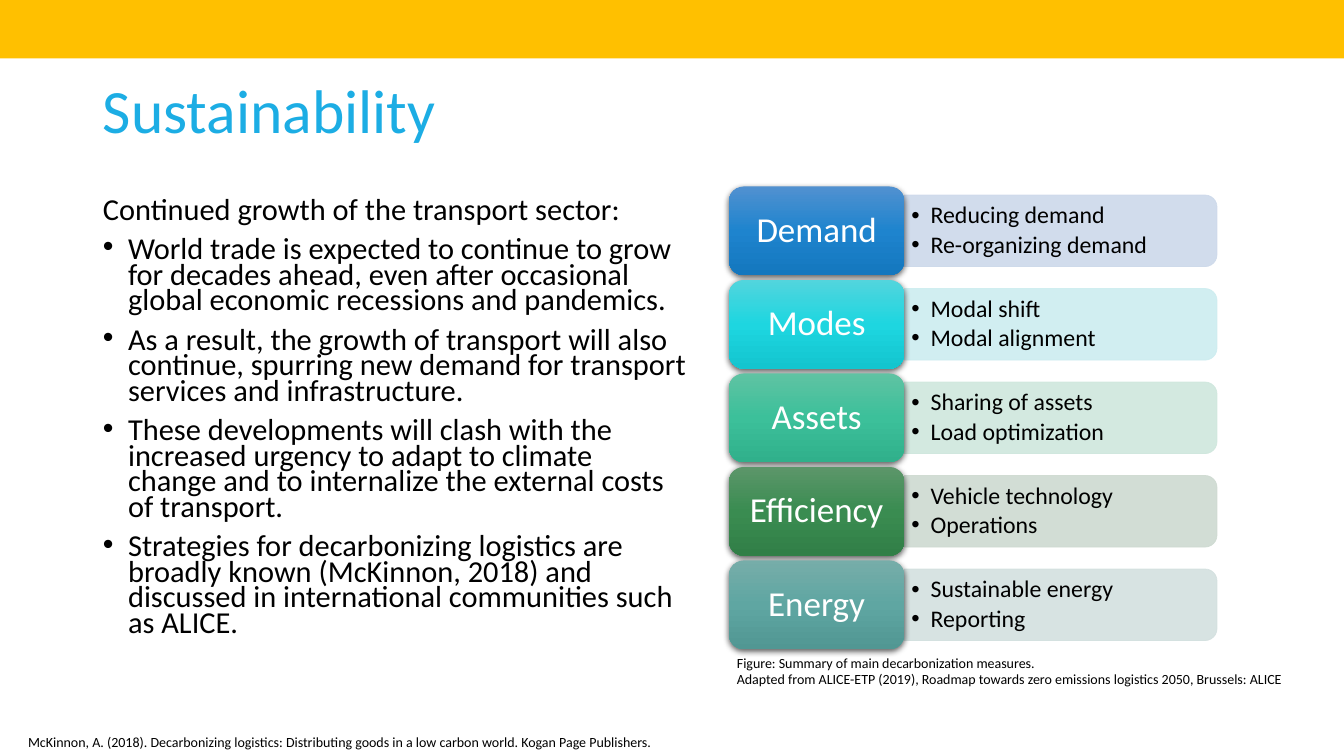
from copy import deepcopy

from lxml import etree
from pptx import Presentation
from pptx.dml.color import RGBColor
from pptx.enum import shapes, text
from pptx.oxml.ns import qn
from pptx.util import Inches, Pt

# Content
TITLE = "Sustainability"
INTRO = "Continued growth of the transport sector:"
POINTS = [
    "World trade is expected to continue to grow for decades ahead, even after "
    "occasional global economic recessions and pandemics.",
    "As a result, the growth of transport will also continue, spurring new demand "
    "for transport services and infrastructure.",
    "These developments will clash with the increased urgency to adapt to climate "
    "change and to internalize the external costs of transport.",
    "Strategies for decarbonizing logistics are broadly known (McKinnon, 2018) and "
    "discussed in international communities such as ALICE.",
]
# label, details, tile gradient (top, middle, bottom), band colour
MEASURES = [
    ("Demand", ["Reducing demand", "Re-organizing demand"],
     ("5191D0", "1E84CE", "1477BE"), "CDD9EA"),
    ("Modes", ["Modal shift", "Modal alignment"],
     ("52D5DD", "1ED6E0", "13C5CF"), "CDEDF0"),
    ("Assets", ["Sharing of assets", "Load optimization"],
     ("5FC3A3", "3CC09A", "30B08B"), "CFE7DD"),
    ("Efficiency", ["Vehicle technology", "Operations"],
     ("5C966A", "3A8C51", "317F47"), "CEDAD1"),
    ("Energy", ["Sustainable energy", "Reporting"],
     ("76ADA9", "5FA6A2", "519793"), "D3E0DF"),
]
CAPTION = [
    "Figure: Summary of main decarbonization measures.",
    "Adapted from ALICE-ETP (2019), Roadmap towards zero emissions logistics 2050, "
    "Brussels: ALICE",
]
REFERENCE = ("McKinnon, A. (2018). Decarbonizing logistics: Distributing goods in a "
             "low carbon world. Kogan Page Publishers.")

# Layout of the measures, in inches
FIRST_TOP, LAST_TOP = 1.85, 5.56
STEP = (LAST_TOP - FIRST_TOP) / (len(MEASURES) - 1)
TILE_LEFT, TILE_WIDTH, TILE_HEIGHT = 7.23, 1.74, 0.88
BAND_LEFT, BAND_LENGTH, BAND_HEIGHT = 8.97, 3.1, 0.71
DETAIL_HEIGHT = 0.64


def color(hex_code):
    return RGBColor.from_string(hex_code)


def box(left, top, width, height):
    return [Inches(value) for value in (left, top, width, height)]


def place(holder, left, top, width, height):
    holder.left, holder.top, holder.width, holder.height = box(left, top, width, height)


def add_xml(parent, tag, **attributes):
    return etree.SubElement(parent, qn(tag), attributes)


def write(frame, lines, size, ink="000000", align=text.PP_ALIGN.LEFT,
          anchor=text.MSO_ANCHOR.TOP, spacing=1.0, before=0, after=0,
          indent=0, bullet_from=None, insets=(0.1, 0.05), wrap=True):
    """Fill a frame; lines from index bullet_from on get a bullet and hanging indent."""
    frame.auto_size = text.MSO_AUTO_SIZE.NONE
    frame.word_wrap = wrap
    frame.vertical_anchor = anchor
    frame.margin_left = frame.margin_right = Inches(insets[0])
    frame.margin_top = frame.margin_bottom = Inches(insets[1])
    for index, line in enumerate(lines):
        paragraph = frame.paragraphs[0] if index == 0 else frame.add_paragraph()
        bulleted = bullet_from is not None and index >= bullet_from
        hang = Inches(indent) if bulleted else 0
        properties = paragraph._p.get_or_add_pPr()
        properties.set("marL", str(hang))
        properties.set("indent", str(-hang))
        if bulleted:
            add_xml(properties, "a:buFont", typeface="Arial")
            add_xml(properties, "a:buChar", char="•")
        else:
            add_xml(properties, "a:buNone")
        paragraph.alignment = align
        paragraph.line_spacing = spacing
        paragraph.space_before = Pt(before if index else 0)
        paragraph.space_after = Pt(after)
        run = paragraph.add_run()
        run.text = line
        run.font.name = "Calibri"
        run.font.size = Pt(size)
        run.font.color.rgb = color(ink)


def add_block(kind, area, fill=None):
    block = slide.shapes.add_shape(kind, *box(*area))
    block.shadow.inherit = False
    block.line.fill.background()
    if fill:
        block.fill.solid()
        block.fill.fore_color.rgb = color(fill)
    return block


def add_band(middle, tint):
    # Turned a quarter, so the rounded end points right
    left = BAND_LEFT + (BAND_LENGTH - BAND_HEIGHT) / 2
    band = add_block(shapes.MSO_SHAPE.ROUND_2_SAME_RECTANGLE,
                     (left, middle - BAND_LENGTH / 2, BAND_HEIGHT, BAND_LENGTH), tint)
    band.rotation = 90
    band.line.color.rgb = color(tint)
    band.line.width = Pt(0.5)
    for paint in band._element.spPr.iter(qn("a:srgbClr")):
        add_xml(paint, "a:alpha", val="90000")


def add_tile(top, label, gradient):
    tile = add_block(shapes.MSO_SHAPE.ROUNDED_RECTANGLE,
                     (TILE_LEFT, top, TILE_WIDTH, TILE_HEIGHT))
    tile.fill.gradient()
    tile.fill.gradient_angle = 270
    properties = tile._element.spPr
    stops = properties.find(".//" + qn("a:gsLst"))
    stops.append(deepcopy(stops[-1]))
    for stop, position, shade in zip(tile.fill.gradient_stops, (0, 0.5, 1), gradient):
        stop.position = position
        stop.color.rgb = color(shade)
    shadow = add_xml(properties.find(qn("a:effectLst")), "a:outerShdw",
                     blurRad=str(Pt(4.5)), dist=str(Pt(1.5)), dir="5400000",
                     algn="ctr", rotWithShape="0")
    add_xml(add_xml(shadow, "a:srgbClr", val="000000"), "a:alpha", val="63000")
    write(tile.text_frame, [label], 25, "FFFFFF", align=text.PP_ALIGN.CENTER,
          anchor=text.MSO_ANCHOR.MIDDLE, spacing=0.9)


def add_text(area, lines, size, **formatting):
    write(slide.shapes.add_textbox(*box(*area)).text_frame, lines, size, **formatting)


deck = Presentation()
deck.slide_width, deck.slide_height = Inches(13.33), Inches(7.5)
slide = deck.slides.add_slide(deck.slide_layouts[1])

# Title and body
title, body = slide.shapes.title, slide.placeholders[1]
place(title, 0.92, 0.4, 11.5, 1.45)
write(title.text_frame, [TITLE], 44, "1CADE4",
      anchor=text.MSO_ANCHOR.MIDDLE, spacing=0.9)
place(body, 0.92, 1.93, 5.99, 4.76)
write(body.text_frame, [INTRO] + POINTS, 21.7, spacing=0.7, before=10,
      indent=0.25, bullet_from=1)

# Top bar and reference
add_block(shapes.MSO_SHAPE.RECTANGLE, (0, 0, 13.33, 0.58), "FFC000")
add_text((0.18, 7.23, 6.97, 0.27), [REFERENCE], 10)

# Measures: band, details and tile in each row
for row, (label, details, gradient, tint) in enumerate(MEASURES):
    top = FIRST_TOP + row * STEP
    middle = top + TILE_HEIGHT / 2
    add_band(middle, tint)
    add_text((BAND_LEFT, middle - DETAIL_HEIGHT / 2, BAND_LENGTH, DETAIL_HEIGHT),
             details, 17, anchor=text.MSO_ANCHOR.MIDDLE, spacing=0.9, after=2.5,
             indent=0.19, bullet_from=0, insets=(0.07, 0.04))
    add_tile(top, label, gradient)

# Figure caption
add_text((7.21, 6.44, 5.69, 0.44), CAPTION, 10, wrap=False)

deck.save("out.pptx")
